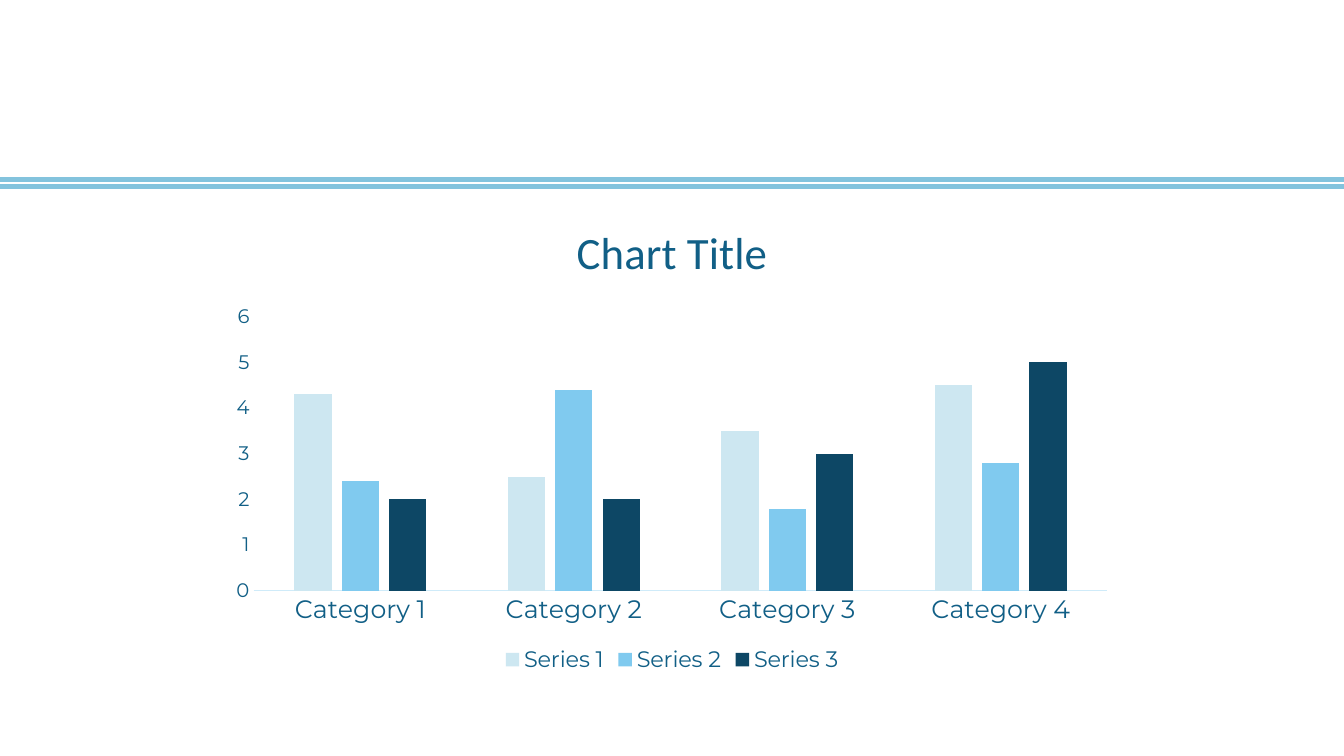
from pptx import Presentation
from pptx.chart.data import CategoryChartData
from pptx.dml.color import RGBColor
from pptx.enum.chart import XL_CHART_TYPE, XL_LEGEND_POSITION, XL_TICK_MARK
from pptx.enum.shapes import MSO_CONNECTOR
from pptx.util import Inches, Pt
from lxml import etree

COLUMNS = XL_CHART_TYPE.COLUMN_CLUSTERED
BOTTOM = XL_LEGEND_POSITION.BOTTOM
NO_TICK = XL_TICK_MARK.NONE
STRAIGHT = MSO_CONNECTOR.STRAIGHT
EFFECTS = "{http://schemas.openxmlformats.org/drawingml/2006/main}effectLst"

THEME = {
    "text": "115F86", "rule": "83C3DD", "axis": "CFEBF9",
    "series": ["CDE7F1", "80CAEF", "0D4765"],
    "title_font": "Calibri", "label_font": "Montserrat",
    "base_size": 10, "title_size": 32, "category_size": 18,
    "value_size": 14, "legend_size": 16,
}


def format_text(font, size, face=THEME["label_font"], color=THEME["text"], bold=False):
    font.name, font.size, font.bold = face, Pt(size), bold
    font.color.rgb = RGBColor.from_string(color)


prs = Presentation()
prs.slide_width, prs.slide_height = Inches(13.33), Inches(7.5)
slide = prs.slides.add_slide(prs.slide_layouts[6])

# Double rule across the slide
for rule_top in (1.85, 1.78):
    rule = slide.shapes.add_connector(
        STRAIGHT, 0, Inches(rule_top), prs.slide_width, Inches(rule_top))
    rule.line.color.rgb = RGBColor.from_string(THEME["rule"])
    rule.line.width = Pt(3)
    etree.SubElement(rule.element.spPr, EFFECTS)

# Chart values, centred below the rule
figures = CategoryChartData()
figures.categories = [f"Category {n}" for n in range(1, 5)]
for n, values in enumerate([(4.3, 2.5, 3.5, 4.5), (2.4, 4.4, 1.8, 2.8), (2, 2, 3, 5)], 1):
    figures.add_series(f"Series {n}", values)

chart_width = Inches(9)
chart = slide.shapes.add_chart(
    COLUMNS, (prs.slide_width - chart_width) // 2, Inches(1.96),
    chart_width, Inches(4.76), figures).chart
format_text(chart.font, THEME["base_size"], face=THEME["title_font"])

# Chart title
chart.has_title = True
heading = chart.chart_title.text_frame.paragraphs[0]
heading_run = heading.add_run()
heading_run.text = "Chart Title"
format_text(heading_run.font, THEME["title_size"], face=THEME["title_font"])
chart.chart_title.include_in_layout = False

# Columns
plot = chart.plots[0]
plot.gap_width, plot.overlap, plot.vary_by_categories = 219, -27, False
for series, color in zip(plot.series, THEME["series"]):
    series.format.fill.solid()
    series.format.fill.fore_color.rgb = RGBColor.from_string(color)

# Axes
for axis, size in ((chart.category_axis, THEME["category_size"]),
                   (chart.value_axis, THEME["value_size"])):
    axis.major_tick_mark = axis.minor_tick_mark = NO_TICK
    axis.has_major_gridlines = False
    format_text(axis.tick_labels.font, size)
chart.category_axis.format.line.color.rgb = RGBColor.from_string(THEME["axis"])
chart.category_axis.format.line.width = Pt(0.75)
chart.value_axis.format.line.fill.background()
chart.value_axis.minimum_scale, chart.value_axis.maximum_scale = 0, 6
chart.value_axis.major_unit = 1

# Legend
chart.has_legend = True
chart.legend.position = BOTTOM
chart.legend.include_in_layout = False
format_text(chart.legend.font, THEME["legend_size"])

prs.save("out.pptx")
